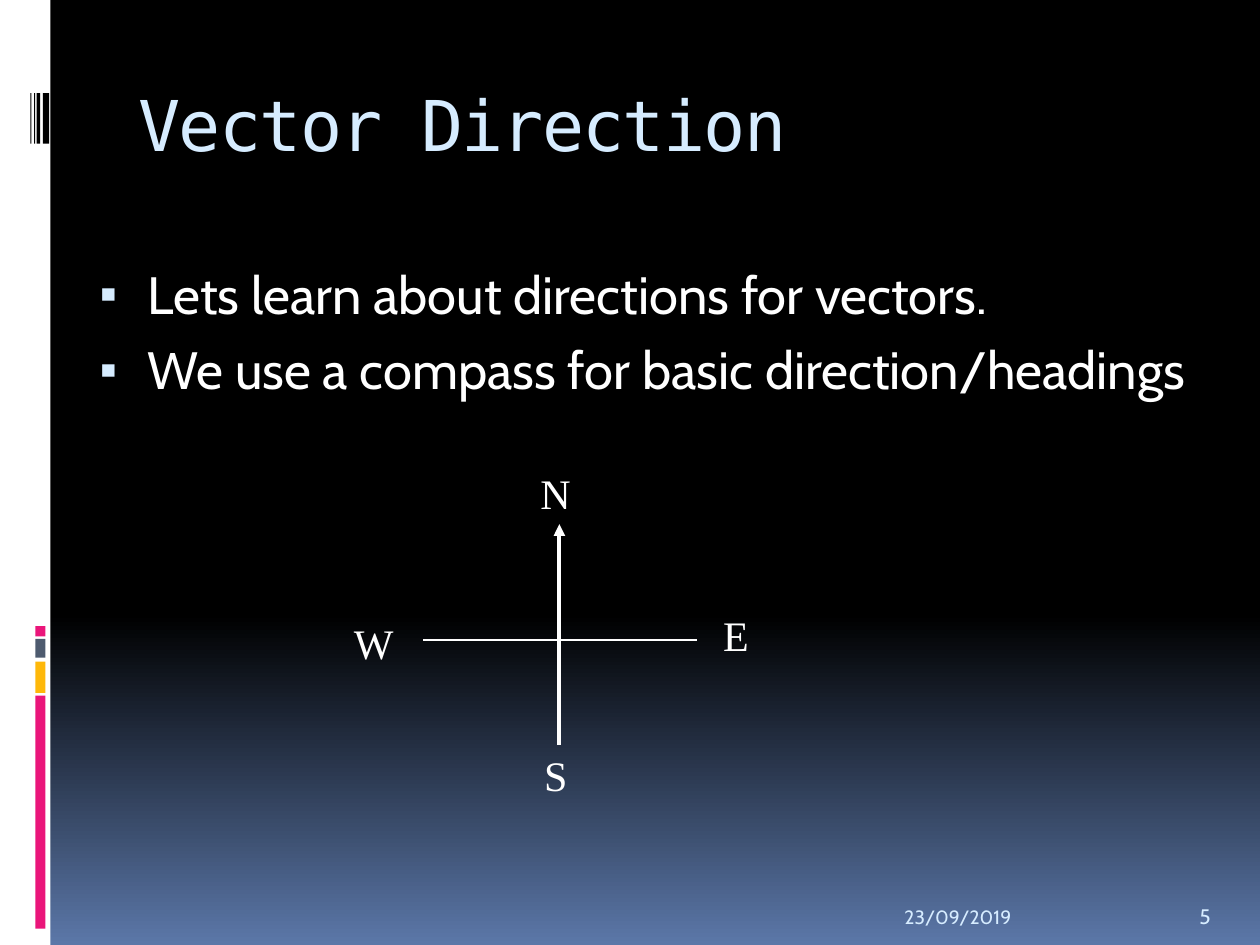
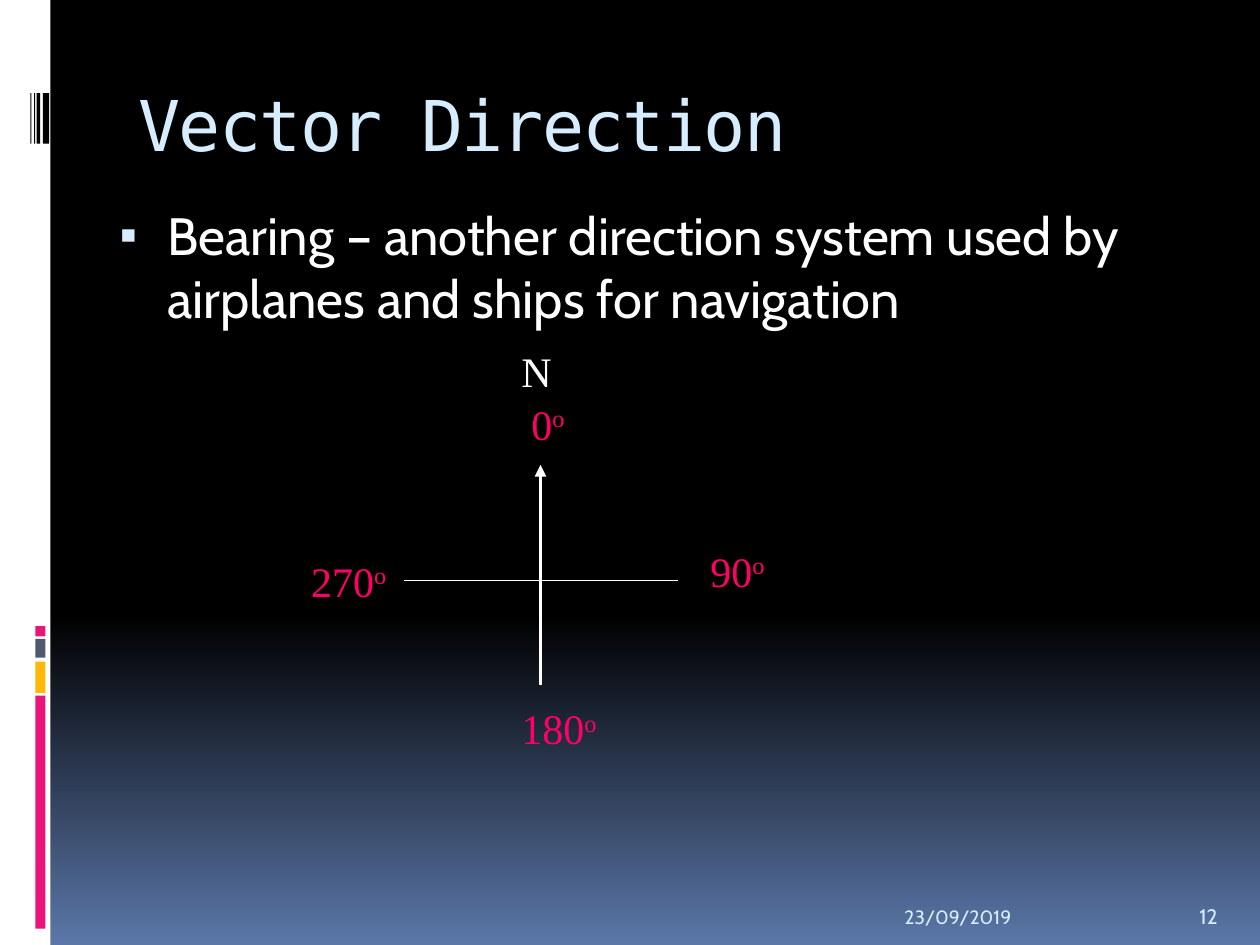
from lxml.etree import SubElement
from pptx import Presentation
from pptx.dml.color import RGBColor
from pptx.enum.shapes import MSO_CONNECTOR, MSO_SHAPE
from pptx.enum.text import MSO_ANCHOR, MSO_AUTO_SIZE, PP_ALIGN
from pptx.oxml.ns import qn
from pptx.util import Inches, Pt

COLORS = {
    "black": "000000", "white": "FFFFFF", "sky": "5B77A8", "ice": "D6ECFF",
    "pink": "EA157A", "amber": "FEB80A", "slate": "4E5B6F", "degree": "FF0066",
}
TITLE_FONT, BODY_FONT, LABEL_FONT = "DejaVu Sans Mono", "Cabin", "Times New Roman"
TITLE, DATE = "Vector Direction", "23/09/2019"
BACKGROUND_STOPS = [(0, "black"), (65, "black"), (100, "sky")]
SIDE_BAND = [  # left, top, width, height, colour
    (0, 0, 0.4, 7.5, "white"),
    (0.28, 5.52, 0.08, 1.85, "pink"),
    (0.28, 5.25, 0.08, 0.25, "amber"),
    (0.28, 5.07, 0.08, 0.15, "slate"),
    (0.28, 4.97, 0.08, 0.08, "pink"),
    *((x, 0.74, w, 0.4, "black")
      for x, w in [(0.34, 0.05), (0.29, 0.03), (0.27, 0.01), (0.24, 0.01)]),
]


def rgb(name):
    return RGBColor.from_string(COLORS[name])


def inches(*lengths):
    return [Inches(n) for n in lengths]


def write(p, text, size=24, font=LABEL_FONT, color="white", spacing=None, raised=None):
    """Add one run to paragraph p; spacing is in points, raised in percent."""
    r = p.add_run()
    r.text = text
    r.font.size = Pt(size)
    r.font.name = font
    r.font.color.rgb = rgb(color)
    rPr = r.font._element
    if spacing:
        rPr.set("spc", str(spacing * 100))
    if raised:
        rPr.set("baseline", str(raised * 1000))


def set_box(sp, box):
    sp.left, sp.top, sp.width, sp.height = inches(*box)


def add_text(shapes, box, text, anchor=MSO_ANCHOR.TOP, **fmt):
    tf = shapes.add_textbox(*inches(*box)).text_frame
    tf.word_wrap = True
    tf.vertical_anchor = anchor
    write(tf.paragraphs[0], text, **fmt)
    return tf


def add_line(shapes, start, end, width, arrow=False):
    line = shapes.add_connector(MSO_CONNECTOR.STRAIGHT, *inches(*start, *end))
    line.line.color.rgb = rgb("white")
    line.line.width = Pt(width)
    if arrow:
        SubElement(line.line._get_or_add_ln(), qn("a:tailEnd"), type="triangle")
    SubElement(line._element.spPr, qn("a:effectLst"))


def set_background(master):
    fill = master.background.fill
    fill.gradient()
    fill.gradient_angle = 270
    stops = master.element.find(".//" + qn("a:gsLst"))
    for stop in list(stops):
        stops.remove(stop)
    for position, color in BACKGROUND_STOPS:
        stop = SubElement(stops, qn("a:gs"), pos=str(position * 1000))
        SubElement(stop, qn("a:srgbClr"), val=COLORS[color])


def add_side_band(master, slide):
    """Draw the band on slide, then move it to the master so all slides share it."""
    for i, (*box, color) in enumerate(SIDE_BAND):
        sp = slide.shapes.add_shape(MSO_SHAPE.RECTANGLE, *inches(*box))
        sp.shadow.inherit = False
        sp.fill.solid()
        sp.fill.fore_color.rgb = rgb(color)
        sp.line.fill.background()
        sp._element.nvSpPr.cNvPr.set("id", str(100 + i))
        master.element.cSld.spTree.append(sp._element)


def set_title(slide):
    sp = slide.shapes.title
    set_box(sp, (1, 0.56, 8.5, 1))
    tf = sp.text_frame
    tf.auto_size = MSO_AUTO_SIZE.NONE
    tf.vertical_anchor = MSO_ANCHOR.TOP
    tf.margin_top = Inches(0.09)
    p = tf.paragraphs[0]
    p.alignment = PP_ALIGN.LEFT
    write(p, TITLE, size=40, font=TITLE_FONT, color="ice", spacing=-1)


def set_bullets(slide, box, items):
    sp = slide.placeholders[1]
    set_box(sp, box)
    tf = sp.text_frame
    tf.auto_size = MSO_AUTO_SIZE.NONE
    for i, text in enumerate(items):
        p = tf.add_paragraph() if i else tf.paragraphs[0]
        p.space_before = Pt(7)
        pPr = p._p.get_or_add_pPr()
        pPr.set("marL", str(Inches(0.45)))
        pPr.set("indent", str(Inches(-0.38)))
        color = SubElement(pPr, qn("a:buClr"))
        SubElement(color, qn("a:srgbClr"), val=COLORS["ice"])
        SubElement(pPr, qn("a:buSzPct"), val="95000")
        SubElement(pPr, qn("a:buChar"), char="▪")
        write(p, text, size=30, font=BODY_FONT)


def add_footer(slide, number):
    for box, text, size in [((7.08, 7.02, 2.33, 0.4), DATE, 11),
                            ((9.42, 7.02, 0.5, 0.4), str(number), 12)]:
        add_text(slide.shapes, box, text, MSO_ANCHOR.BOTTOM,
                 size=size, font=BODY_FONT, color="ice")


def add_compass(slide, center, labels):
    """Labels are (text, dx, dy, width) from the centre; numbers become degrees."""
    x, y = center
    shapes = slide.shapes.add_group_shape().shapes
    add_line(shapes, (x, y + 0.83), (x, y - 0.92), 2.25, arrow=True)
    add_line(shapes, (x - 1.08, y), (x + 1.09, y), 0.75)
    for text, dx, dy, width in labels:
        is_degree = text.isdigit()
        color = "degree" if is_degree else "white"
        tf = add_text(shapes, (x + dx, y + dy, width, 0.5), text, color=color)
        tf.auto_size = MSO_AUTO_SIZE.SHAPE_TO_FIT_TEXT
        if is_degree:
            write(tf.paragraphs[0], "o", color=color, raised=30)


def add_direction_slide(prs, number, body_box, bullets, center, labels):
    slide = prs.slides.add_slide(prs.slide_layouts[1])
    set_title(slide)
    set_bullets(slide, body_box, bullets)
    add_footer(slide, number)
    add_compass(slide, center, labels)
    return slide


def main():
    prs = Presentation()
    prs.slide_width, prs.slide_height = inches(10, 7.5)
    set_background(prs.slide_master)
    slide = add_direction_slide(
        prs, 5, (0.62, 2.03, 9.38, 1.41),
        ["Lets learn about directions for vectors.",
         "We use a compass for basic direction/headings"],
        (4.44, 5.08),
        [("N", -0.25, -1.42, 0.67), ("E", 1.2, -0.29, 0.92),
         ("S", -0.22, 0.82, 0.58), ("W", -1.73, -0.23, 0.58)])
    add_side_band(prs.slide_master, slide)
    add_direction_slide(
        prs, 12, (0.78, 1.56, 8.98, 1.75),
        ["Bearing – another direction system used by airplanes and ships for navigation"],
        (4.29, 4.61),
        [("N", -0.25, -1.92, 0.67), ("0", -0.17, -1.5, 0.67),
         ("90", 1.25, -0.33, 0.67), ("180", -0.25, 0.92, 1.08),
         ("270", -1.92, -0.25, 1.08)])
    prs.save("out.pptx")


if __name__ == "__main__":
    main()
